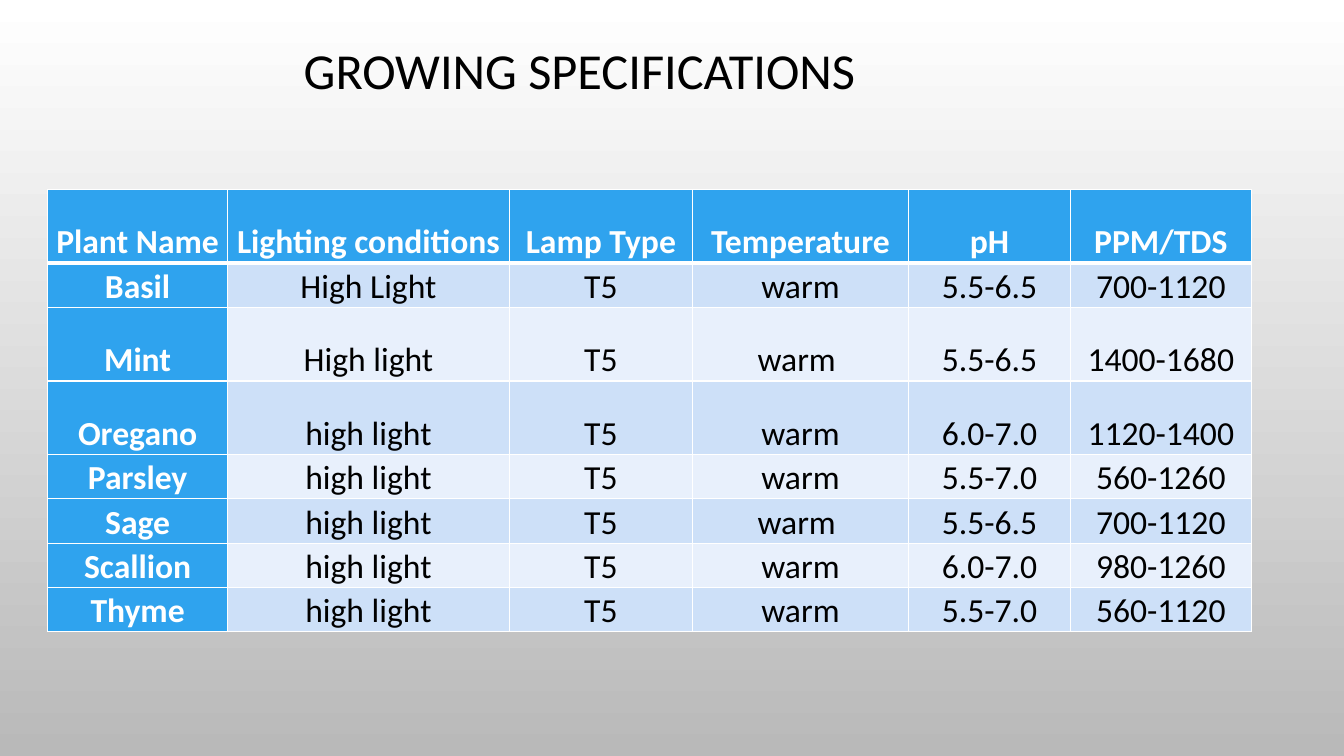
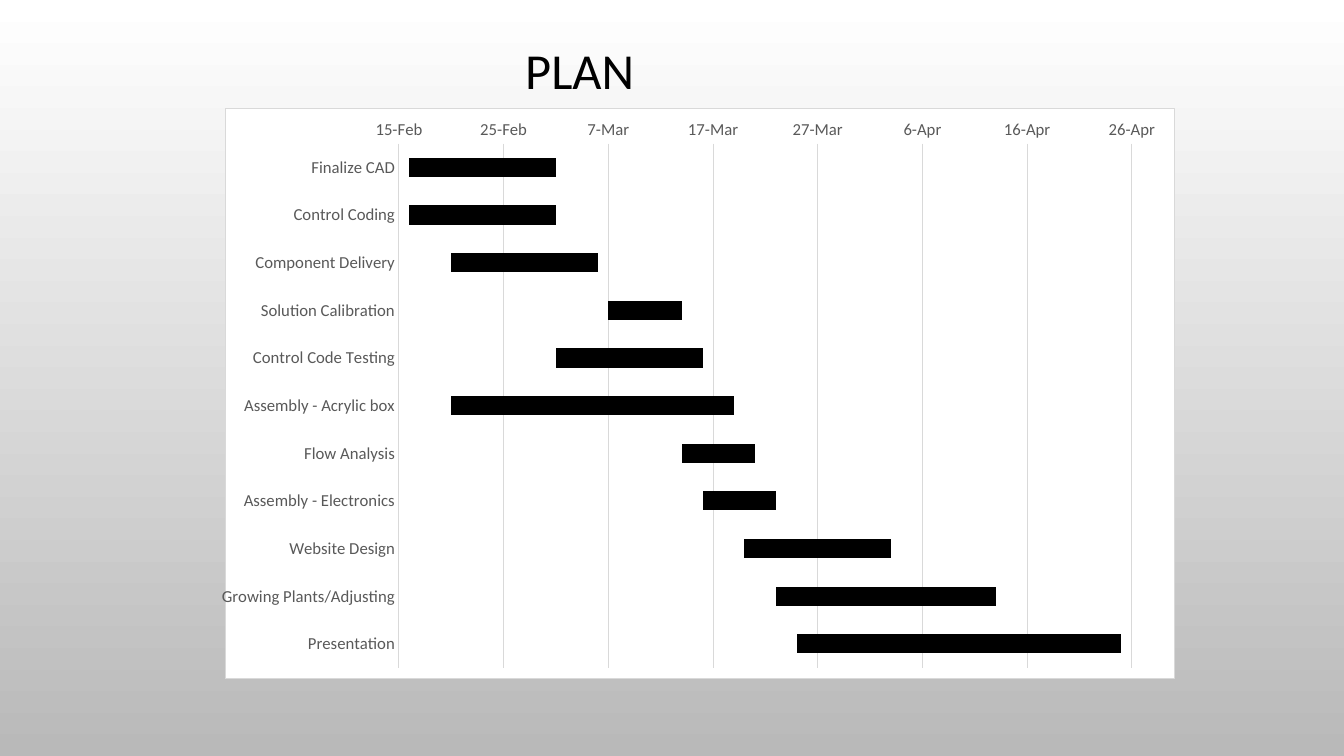
import pptx
import pptx.util
import pptx.dml.color
import pptx.enum.text
import pptx.enum.chart
import pptx.chart.data
import pptx.oxml
import pptx.oxml.ns
from pptx.util import Inches

COLORS = {
    "black": "000000", "white": "FFFFFF", "bottom": "B9B9B9", "blue": "2FA3EE",
    "band_dark": "CDE0F8", "band_light": "E8F0FC", "label": "595959", "line": "D9D9D9",
}
RGB = {name: pptx.dml.color.RGBColor.from_string(code) for name, code in COLORS.items()}
FONT = "Calibri"
Pt = pptx.util.Pt
NSDECLS = pptx.oxml.ns.nsdecls("a", "c")


def style_font(font, size, color, bold=False):
    font.name = FONT
    font.size = Pt(size)
    font.bold = bold
    font.color.rgb = RGB[color]


def add_titled_slide(title):
    s = prs.slides.add_slide(prs.slide_layouts[6])
    tf = s.shapes.add_textbox(0, 0, Inches(11.5), Inches(1.45)).text_frame
    tf.word_wrap = True
    tf.vertical_anchor = pptx.enum.text.MSO_ANCHOR.MIDDLE
    p = tf.paragraphs[0]
    p.text = title
    p.alignment = pptx.enum.text.PP_ALIGN.CENTER
    p.line_spacing = 0.9
    style_font(p.runs[0].font, 36, "black")
    return s


prs = pptx.Presentation()
prs.slide_width = Inches(13.33)
prs.slide_height = Inches(7.5)

# Shared background
fill = prs.slide_master.background.fill
fill.gradient()
fill.gradient_angle = 270
for stop, color in zip(fill.gradient_stops, ("white", "bottom")):
    stop.color.rgb = RGB[color]

# Growing specifications
s = add_titled_slide("GROWING SPECIFICATIONS")
plants = [
    ("Plant Name", "Lighting conditions", "Lamp Type", "Temperature", "pH", "PPM/TDS"),
    ("Basil", "High Light", "T5", "warm", "5.5-6.5", "700-1120"),
    ("Mint", "High light", "T5", "warm ", "5.5-6.5", "1400-1680"),
    ("Oregano", "high light", "T5", "warm", "6.0-7.0", "1120-1400"),
    ("Parsley", "high light", "T5", "warm", "5.5-7.0", "560-1260"),
    ("Sage", "high light", "T5", "warm ", "5.5-6.5", "700-1120"),
    ("Scallion", "high light", "T5", "warm", "6.0-7.0", "980-1260"),
    ("Thyme", "high light", "T5", "warm", "5.5-7.0", "560-1120"),
]
col_widths = [1.79, 2.79, 1.82, 2.14, 1.61, 1.79]
tall_rows = (0, 2, 3)
table = s.shapes.add_table(len(plants), len(col_widths), Inches(0.47), Inches(1.88),
                           Inches(11.94), Inches(4.39)).table
table.first_col = True
for column, width in zip(table.columns, col_widths):
    column.width = Inches(width)
for i, plant in enumerate(plants):
    table.rows[i].height = Inches(0.73 if i in tall_rows else 0.44)
    for j, text in enumerate(plant):
        cell = table.cell(i, j)
        heading = i == 0 or j == 0
        cell.margin_left = cell.margin_right = Inches(0.07)
        cell.margin_top = cell.margin_bottom = 0
        cell.vertical_anchor = pptx.enum.text.MSO_ANCHOR.BOTTOM
        p = cell.text_frame.paragraphs[0]
        p.text = text
        p.alignment = pptx.enum.text.PP_ALIGN.CENTER
        p.line_spacing = 1.07
        style_font(p.runs[0].font, 24, "white" if heading else "black", heading)
        tcPr = cell._tc.get_or_add_tcPr()
        for side in "LRTB":
            under_header = (i, side) in ((0, "B"), (1, "T"))
            tcPr.append(pptx.oxml.parse_xml(
                f'<a:ln{side} {NSDECLS} w="{Pt(3 if under_header else 1)}"><a:solidFill>'
                f'<a:srgbClr val="{COLORS["white"]}"/></a:solidFill></a:ln{side}>'))
        cell.fill.solid()
        band = "band_dark" if i % 2 else "band_light"
        cell.fill.fore_color.rgb = RGB["blue" if heading else band]

# Plan: each task has a start date (as a day number) and a length in days
s = add_titled_slide("PLAN")
tasks = [
    ("Finalize CAD", 41686, 14),
    ("Control Coding", 41686, 14),
    ("Component Delivery", 41690, 14),
    ("Solution Calibration", 41705, 7),
    ("Control Code Testing", 41700, 14),
    ("Assembly - Acrylic box", 41690, 27),
    ("Flow Analysis", 41712, 7),
    ("Assembly - Electronics", 41714, 7),
    ("Website Design", 41718, 14),
    ("Growing Plants/Adjusting", 41721, 21),
    ("Presentation", 41723, 31),
]
names, starts, days = zip(*tasks)
data = pptx.chart.data.CategoryChartData()
data.categories = names
data.add_series("Series 1", starts)
data.add_series("Series 2", days)
chart_width, chart_height = 9.45, 5.67
chart = s.shapes.add_chart(pptx.enum.chart.XL_CHART_TYPE.BAR_STACKED, Inches(2.2), Inches(1.07),
                           Inches(chart_width), Inches(chart_height), data).chart
chart.has_legend = False
chart.has_title = False
style_font(chart.font, 10, "black")

plot = chart.plots[0]
plot.vary_by_categories = False
plot.gap_width = 150
plot.overlap = 100
start_bars, day_bars = plot.series
start_bars.format.fill.background()
day_bars.format.fill.solid()
day_bars.format.fill.fore_color.rgb = RGB["black"]

task_axis, date_axis = chart.category_axis, chart.value_axis
for axis in (task_axis, date_axis):
    axis.major_tick_mark = axis.minor_tick_mark = pptx.enum.chart.XL_TICK_MARK.NONE
    style_font(axis.tick_labels.font, 12, "label")
    # Automatic rotation keeps long labels on one line
    axis._element.find(".//" + pptx.oxml.ns.qn("a:bodyPr")).set("rot", "-60000000")
task_axis.reverse_order = True
date_axis.minimum_scale = 41685
date_axis.maximum_scale = 41755
date_axis.major_unit = 10
date_axis.tick_labels.number_format = r"[$-409]d\-mmm;@"
date_axis.tick_labels.number_format_is_linked = False
date_axis.has_major_gridlines = True
date_axis.format.line.fill.background()
for line in (task_axis.format.line, date_axis.major_gridlines.format.line):
    line.color.rgb = RGB["line"]
    line.width = Pt(0.75)

# Chart frame and fixed plot area
chart_xml = chart._chartSpace.find(pptx.oxml.ns.qn("c:chart"))
chart_xml.addnext(pptx.oxml.parse_xml(
    f'<c:spPr {NSDECLS}><a:solidFill><a:srgbClr val="{COLORS["white"]}"/></a:solidFill>'
    f'<a:ln w="{Pt(0.75)}"><a:solidFill><a:srgbClr val="{COLORS["line"]}"/></a:solidFill></a:ln>'
    '</c:spPr>'))
plot_area = chart_xml.find(pptx.oxml.ns.qn("c:plotArea"))
for layout in plot_area.findall(pptx.oxml.ns.qn("c:layout")):
    plot_area.remove(layout)
plot_area.insert(0, pptx.oxml.parse_xml(
    f'<c:layout {NSDECLS}><c:manualLayout><c:layoutTarget val="inner"/>'
    '<c:xMode val="edge"/><c:yMode val="edge"/>'
    f'<c:x val="{1.73 / chart_width}"/><c:y val="{0.35 / chart_height}"/>'
    f'<c:w val="{7.3 / chart_width}"/><c:h val="{5.21 / chart_height}"/>'
    '</c:manualLayout></c:layout>'))

prs.save("out.pptx")
